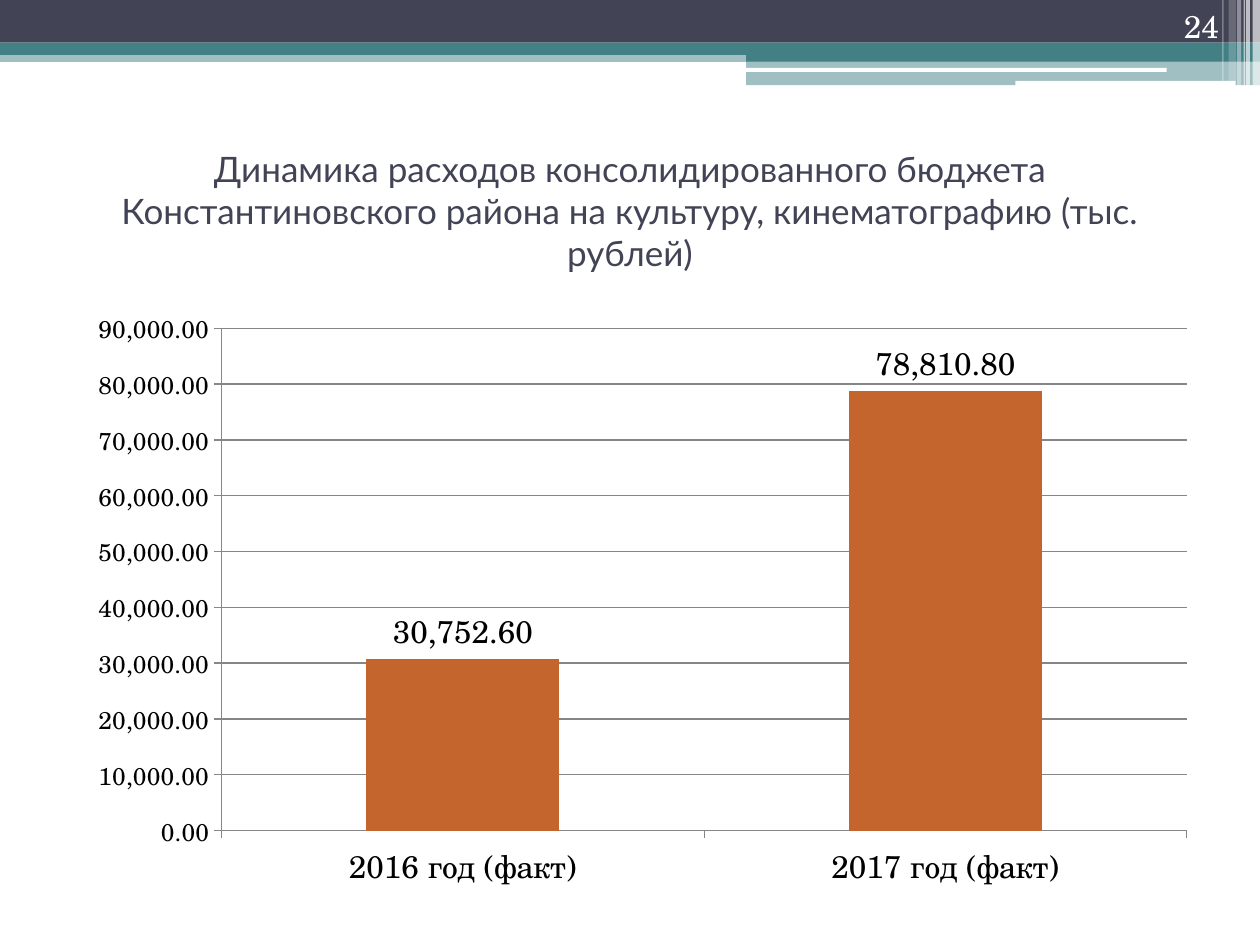
from lxml import etree
from pptx import Presentation
from pptx.chart.data import CategoryChartData
from pptx.dml.color import RGBColor
from pptx.enum import chart as charts, shapes, text
from pptx.oxml import parse_xml
from pptx.oxml.ns import nsdecls, qn
from pptx.util import Cm, Pt

TITLE = ("Динамика расходов консолидированного бюджета "
         "Константиновского района на культуру, кинематографию (тыс. рублей)")
PAGE_NUMBER = "24"
SPENDING = {"2016 год (факт)": 30752.6, "2017 год (факт)": 78810.8}

THEME = {
    "dark": "424456", "teal": "438086", "white": "FFFFFF",
    "bar": "C4652D", "line": "868686", "ink": "000000",
    "title_font": "Lato", "body_font": "TeX Gyre Schola",
    "title_size": 20, "body_size": 18, "axis_size": 14,
}

PAGE_WIDTH, PAGE_HEIGHT = 25.4, 19.05
RIGHT_START = 15.04
RIGHT_WIDTH = PAGE_WIDTH - RIGHT_START
# left, top, width, height in cm, colour, opacity in percent
BANDS = [
    (0, 1.02, PAGE_WIDTH, 0.23, "teal", 50),
    (0, 0, PAGE_WIDTH, 0.86, "dark", 100),
    (0, 0.86, PAGE_WIDTH, 0.25, "teal", 100),
    (RIGHT_START, 0.99, RIGHT_WIDTH, 0.25, "teal", 100),
    (RIGHT_START, 1.22, RIGHT_WIDTH, 0.5, "teal", 50),
]
SLOTS = [(15.01, 1.37, 8.51, 0.08), (20.47, 1.63, 4.44, 0.1)]
# left, width, height in cm, opacity in percent
STRIPES = [
    (25.25, 0.15, 1.73, 65), (25.12, 0.08, 1.73, 65), (25.07, 0.03, 1.73, 60),
    (24.94, 0.08, 1.73, 40), (24.77, 0.15, 1.63, 20), (24.64, 0.03, 1.63, 30),
]
TITLE_BOX = (1.27, 3.18, 22.86, 2.97)
CHART_BOX = (1.27, 6.25, 22.86, 12.01)
NUMBER_BOX = (22.71, 0, 2.11, 1.02)
PLOT_AREA = {"x": 0.14, "y": 0.023, "w": 0.851, "h": 0.85}


def color(name):
    return RGBColor.from_string(THEME[name])


def lengths(box):
    return [Cm(value) for value in box]


def style_font(font, size, family="body_font", ink="ink"):
    font.name = THEME[family]
    font.size = Pt(THEME[size])
    font.color.rgb = color(ink)
    font.bold = False


def add_block(page, box, fill, opacity=100, kind=shapes.MSO_SHAPE.RECTANGLE):
    block = page.shapes.add_shape(kind, *lengths(box))
    block.shadow.inherit = False
    block.fill.solid()
    block.fill.fore_color.rgb = color(fill)
    block.line.fill.background()
    if opacity < 100:
        tint = block.fill._xPr.find(".//" + qn("a:srgbClr"))
        etree.SubElement(tint, qn("a:alpha"), val=str(opacity * 1000))


def add_header(page):
    for *box, fill, opacity in BANDS:
        add_block(page, box, fill, opacity)
    for box in SLOTS:
        add_block(page, box, "white", kind=shapes.MSO_SHAPE.ROUNDED_RECTANGLE)
    for left, width, height, opacity in STRIPES:
        add_block(page, (left, 0, width, height), "white", opacity)


def write(box, words, align, anchor, **font):
    frame = box.text_frame
    frame.word_wrap = True
    frame.auto_size = text.MSO_AUTO_SIZE.NONE
    frame.vertical_anchor = anchor
    para = frame.paragraphs[0]
    para.alignment = align
    span = para.add_run()
    span.text = words
    style_font(span.font, **font)


def fix_plot_area(chart):
    """Pin the inner plot area to fixed fractions of the chart."""
    modes = "".join(f'<c:{axis}Mode val="edge"/>' for axis in "xy")
    sizes = "".join(f'<c:{key} val="{part}"/>' for key, part in PLOT_AREA.items())
    layout = parse_xml(
        f'<c:layout {nsdecls("c")}><c:manualLayout><c:layoutTarget val="inner"/>'
        f'{modes}{sizes}</c:manualLayout></c:layout>')
    area = chart._chartSpace.chart.plotArea
    for old in area.findall(qn("c:layout")):
        area.remove(old)
    area.insert(0, layout)


def style_line(line):
    line.color.rgb = color("line")
    line.width = Pt(0.75)


def add_spending_chart(page):
    data = CategoryChartData(number_format="#,##0.00")
    data.categories = list(SPENDING)
    data.add_series("Series 1", list(SPENDING.values()))
    chart = page.shapes.add_chart(
        charts.XL_CHART_TYPE.COLUMN_CLUSTERED, *lengths(CHART_BOX), data).chart
    chart.has_legend = False
    chart.has_title = False
    style_font(chart.font, "body_size")
    fix_plot_area(chart)

    plot = chart.plots[0]
    plot.gap_width = 150
    plot.vary_by_categories = False
    bars = plot.series[0]
    bars.format.fill.solid()
    bars.format.fill.fore_color.rgb = color("bar")
    labels = bars.data_labels
    labels.show_value = True
    labels.number_format = "#,##0.00"
    labels.number_format_is_linked = False
    labels.position = charts.XL_LABEL_POSITION.OUTSIDE_END
    style_font(labels.font, "body_size")

    amounts = chart.value_axis
    for axis, size in ((chart.category_axis, "body_size"), (amounts, "axis_size")):
        axis.major_tick_mark = charts.XL_TICK_MARK.OUTSIDE
        style_line(axis.format.line)
        style_font(axis.tick_labels.font, size)
    amounts.minimum_scale, amounts.maximum_scale = 0, 90000
    amounts.major_unit = 10000
    amounts.tick_labels.number_format = "#,##0.00"
    amounts.tick_labels.number_format_is_linked = False
    amounts.has_major_gridlines = True
    style_line(amounts.major_gridlines.format.line)


def main():
    deck = Presentation()
    deck.slide_width, deck.slide_height = Cm(PAGE_WIDTH), Cm(PAGE_HEIGHT)
    page = deck.slides.add_slide(deck.slide_layouts[5])
    add_header(page)

    title = page.shapes.title
    title.left, title.top, title.width, title.height = lengths(TITLE_BOX)
    title.text_frame.margin_bottom = Cm(0.97)
    write(title, TITLE, text.PP_ALIGN.CENTER, text.MSO_ANCHOR.MIDDLE,
          size="title_size", family="title_font", ink="dark")
    add_spending_chart(page)
    number = page.shapes.add_textbox(*lengths(NUMBER_BOX))
    write(number, PAGE_NUMBER, text.PP_ALIGN.RIGHT, text.MSO_ANCHOR.BOTTOM,
          size="body_size", ink="white")
    deck.save("out.pptx")


if __name__ == "__main__":
    main()
